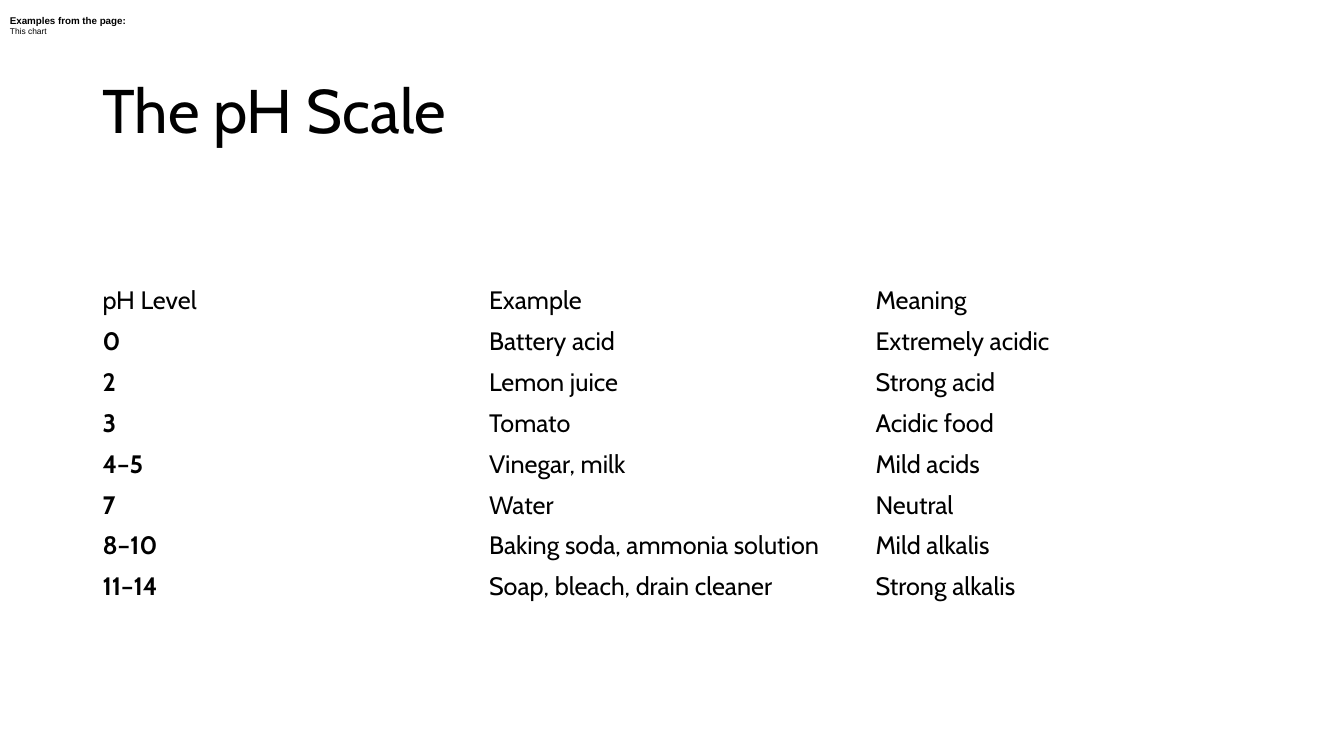
import pptx
import pptx.dml.color
import pptx.enum.text
import pptx.util
from pptx.util import Cm

COLOURS = {"ink": "000000", "page": "FFFFFF"}
NO_GRID_STYLE = "{2D5ABB26-0587-4C30-8999-92F81FD0307C}"
MIDDLE = pptx.enum.text.MSO_ANCHOR.MIDDLE

TITLE = {"name": "Cabin", "size": pptx.util.Pt(44), "bold": False}
BODY = {"name": "Cabin", "size": pptx.util.Pt(18), "bold": False}
LEVEL = {**BODY, "bold": True}
NOTE_HEADING = {"name": "Arial", "size": pptx.util.Pt(7), "bold": True}
NOTE_DETAIL = {"name": "Arial", "size": pptx.util.Pt(6), "bold": False}

PH_ROWS = [
    ("pH Level", "Example", "Meaning"),
    ("0", "Battery acid", "Extremely acidic"),
    ("2", "Lemon juice", "Strong acid"),
    ("3", "Tomato", "Acidic food"),
    ("4–5", "Vinegar, milk", "Mild acids"),
    ("7", "Water", "Neutral"),
    ("8–10", "Baking soda, ammonia solution", "Mild alkalis"),
    ("11–14", "Soap, bleach, drain cleaner", "Strong alkalis"),
]


def write_line(paragraph, wording, font_format):
    run = paragraph.add_run()
    run.text = wording
    for attribute, value in font_format.items():
        setattr(run.font, attribute, value)
    run.font.color.rgb = pptx.dml.color.RGBColor.from_string(COLOURS["ink"])


def add_text(slide, left, top, width, height, lines, line_spacing=1.0):
    frame = slide.shapes.add_textbox(left, top, width, height).text_frame
    frame.word_wrap = True
    frame.vertical_anchor = MIDDLE
    for index, (wording, font_format) in enumerate(lines):
        paragraph = frame.add_paragraph() if index else frame.paragraphs[0]
        paragraph.line_spacing = line_spacing
        write_line(paragraph, wording, font_format)


def add_ph_table(slide, left, top, column_width, row_height):
    column_count = len(PH_ROWS[0])
    table = slide.shapes.add_table(
        len(PH_ROWS), column_count, left, top,
        column_width * column_count, row_height * len(PH_ROWS),
    ).table
    table.horz_banding = False
    table._tbl.tblPr.find(pptx.oxml.ns.qn("a:tableStyleId")).text = NO_GRID_STYLE
    for row_index, entries in enumerate(PH_ROWS):
        for column_index, wording in enumerate(entries):
            cell = table.cell(row_index, column_index)
            cell.fill.background()
            cell.vertical_anchor = MIDDLE
            is_level = row_index > 0 and column_index == 0
            write_line(cell.text_frame.paragraphs[0], wording, LEVEL if is_level else BODY)


def main():
    presentation = pptx.Presentation()
    presentation.slide_width = Cm(33.87)
    presentation.slide_height = Cm(19.05)
    slide = presentation.slides.add_slide(presentation.slide_layouts[6])
    page_fill = slide.background.fill
    page_fill.solid()
    page_fill.fore_color.rgb = pptx.dml.color.RGBColor.from_string(COLOURS["page"])

    add_text(slide, Cm(2.33), Cm(1.01), Cm(29.21), Cm(3.68), [("The pH Scale", TITLE)], 0.9)
    add_ph_table(slide, Cm(2.33), Cm(7.06), Cm(9.74), Cm(1.03))
    add_text(
        slide, Cm(0), Cm(0), Cm(33.87), Cm(1.27),
        [("Examples from the page:", NOTE_HEADING), ("This chart", NOTE_DETAIL)],
    )
    presentation.save("out.pptx")


if __name__ == "__main__":
    main()
